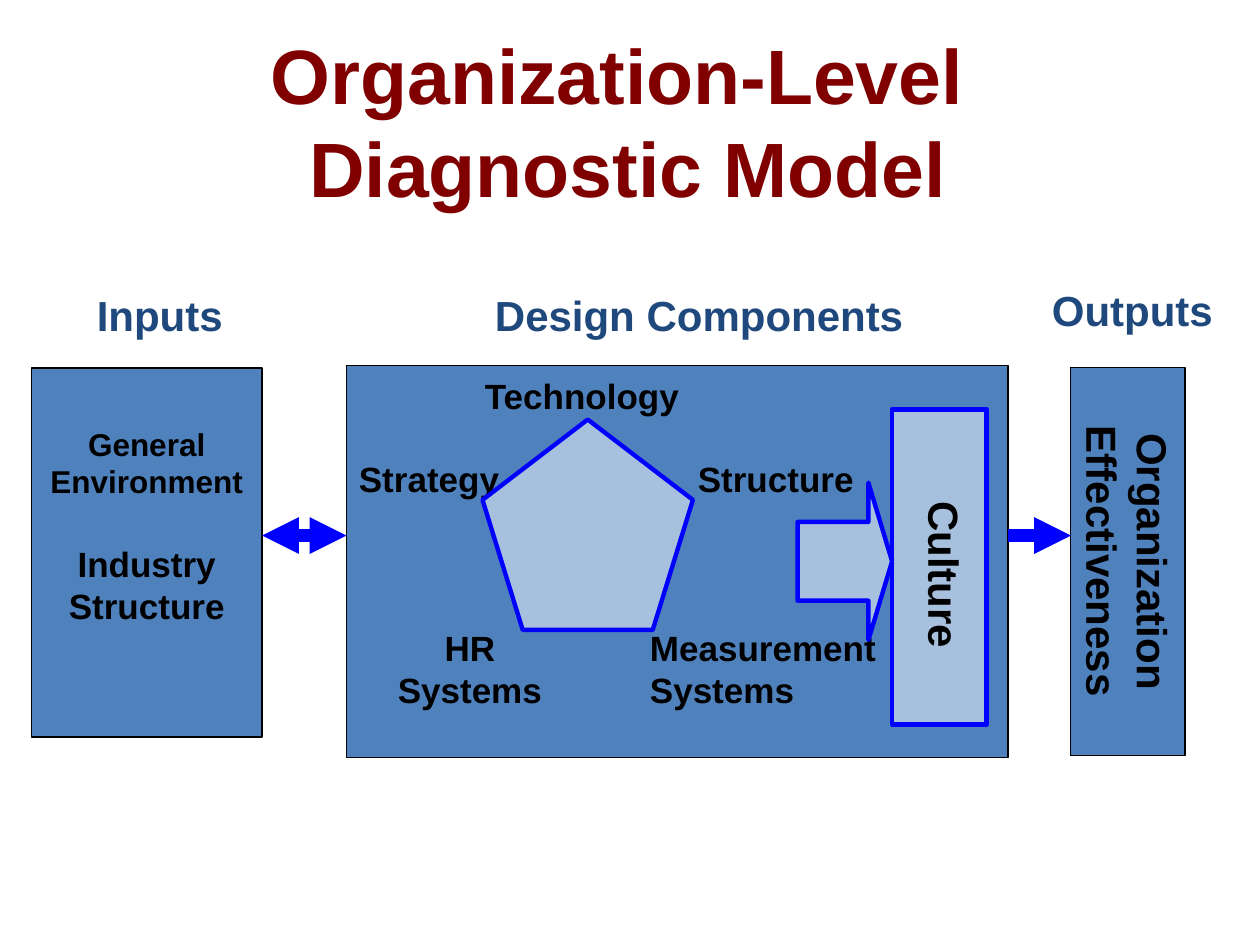
from dataclasses import dataclass

from lxml.etree import SubElement
from pptx import Presentation
from pptx.dml.color import RGBColor
from pptx.enum.shapes import MSO_CONNECTOR, MSO_SHAPE
from pptx.enum.text import MSO_ANCHOR, MSO_AUTO_SIZE, PP_ALIGN
from pptx.oxml.ns import qn
from pptx.util import Inches, Pt


@dataclass(frozen=True)
class Theme:
    font: str = "Arial"
    title: RGBColor = RGBColor(0x80, 0x00, 0x00)
    head: RGBColor = RGBColor(0x1F, 0x49, 0x7D)
    panel: RGBColor = RGBColor(0x4F, 0x81, 0xBD)
    accent: RGBColor = RGBColor(0x00, 0x00, 0xFF)
    white: RGBColor = RGBColor(0xFF, 0xFF, 0xFF)
    black: RGBColor = RGBColor(0x00, 0x00, 0x00)
    huge: int = 44
    large: int = 24
    mid: int = 20
    small: int = 18


theme = Theme()
LEFT, MID = PP_ALIGN.LEFT, PP_ALIGN.CENTER


def write(shape, lines, size, color, align=LEFT, wrap=True):
    """Fill the shape with one bold paragraph per line, from the top."""
    frame = shape.text_frame
    frame.text = "\n".join(lines)
    layout = {"word_wrap": wrap, "auto_size": MSO_AUTO_SIZE.NONE,
              "vertical_anchor": MSO_ANCHOR.TOP}
    for name, value in layout.items():
        setattr(frame, name, value)
    style = {"name": theme.font, "size": Pt(size), "bold": True}
    for para in frame.paragraphs:
        para.alignment = align
        for run in para.runs:
            for name, value in style.items():
                setattr(run.font, name, value)
            run.font.color.rgb = color
    return frame


def draw(kind, box, clear=False):
    """Add a solid panel, or a half clear white one with a bright edge."""
    shape = slide.shapes.add_shape(kind, *map(Inches, box))
    shape.shadow.inherit = False
    shape.fill.solid()
    shape.fill.fore_color.rgb = theme.white if clear else theme.panel
    shape.line.color.rgb = theme.accent if clear else theme.black
    shape.line.width = Pt(2.5 if clear else 0.75)
    if clear:
        color = shape.fill._xPr.find(qn("a:solidFill"))[0]
        SubElement(color, qn("a:alpha"), val="50000")
    return shape


deck = Presentation()
deck.slide_width, deck.slide_height = Inches(10), Inches(7.5)
slide = deck.slides.add_slide(deck.slide_layouts[5])

# Title
title = slide.shapes.title
place = {"left": 0.42, "top": 0.17, "width": 9.13, "height": 1.58}
for name, value in place.items():
    setattr(title, name, Inches(value))
write(title, ["Organization-Level ", "Diagnostic Model"],
      theme.huge, theme.title, MID)

# Column headings
heads = [("Inputs", 0.67, 2.25, 1.21),
         ("Design Components", 3.83, 2.25, 3.47),
         ("Outputs", 8.25, 2.21, 1.49)]
for words, left, top, width in heads:
    box = slide.shapes.add_textbox(*map(Inches, (left, top, width, 0.5)))
    write(box, [words], theme.large, theme.head, wrap=False)

# Inputs
inputs = draw(MSO_SHAPE.RECTANGLE, (0.25, 2.92, 1.83, 2.93))
frame = write(inputs, ["General", "Environment", "Industry", "Structure"],
              theme.mid, theme.black, MID)
frame.margin_top = Inches(0.45)
for para in frame.paragraphs[:2]:
    para.runs[0].font.size = Pt(theme.small)
frame.paragraphs[2].space_before = Pt(theme.large)

# Design components
draw(MSO_SHAPE.RECTANGLE, (2.75, 2.9, 5.25, 3.11))
labels = [(["Technology"], 3.75, 2.92, 1.75, LEFT),
          (["Strategy"], 2.75, 3.58, 1.4, LEFT),
          (["Structure"], 5.44, 3.58, 1.5, LEFT),
          (["HR", "Systems"], 3.03, 4.92, 1.4, MID),
          (["Measurement", "Systems"], 5.06, 4.92, 2.05, LEFT)]
for lines, left, top, width, align in labels:
    size = (left, top, width, 0.1 + 0.33 * len(lines))
    box = slide.shapes.add_textbox(*map(Inches, size))
    write(box, lines, theme.mid, theme.black, align, wrap=False)

draw(MSO_SHAPE.REGULAR_PENTAGON, (3.83, 3.33, 1.67, 1.67), clear=True)
arrow = draw(MSO_SHAPE.RIGHT_ARROW, (6.33, 3.83, 0.75, 1.25), clear=True)
arrow.adjustments[0], arrow.adjustments[1] = 0.5, 0.25
draw(MSO_SHAPE.RECTANGLE, (7.08, 3.25, 0.75, 2.5), clear=True)
culture = slide.shapes.add_textbox(*map(Inches, (6.81, 4.32, 1.38, 0.5)))
culture.rotation = 90
write(culture, ["Culture"], theme.large, theme.black, wrap=False)

# Outputs
outputs = draw(MSO_SHAPE.RECTANGLE, (7.41, 4, 3.08, 0.91))
outputs.rotation = 90
write(outputs, ["Organization", "Effectiveness"],
      theme.large, theme.black, MID)

# Flow between the columns
flows = [(2.08, 2.75, ["headEnd", "tailEnd"]), (8, 8.5, ["tailEnd"])]
for start, stop, ends in flows:
    link = slide.shapes.add_connector(
        MSO_CONNECTOR.STRAIGHT, *map(Inches, (start, 4.25, stop, 4.25)))
    link.line.color.rgb = theme.accent
    link.line.width = Pt(7)
    for end in ends:
        SubElement(link.line._get_or_add_ln(), qn("a:" + end),
                   type="triangle")
    SubElement(link._element.spPr, qn("a:effectLst"))

deck.save("out.pptx")
